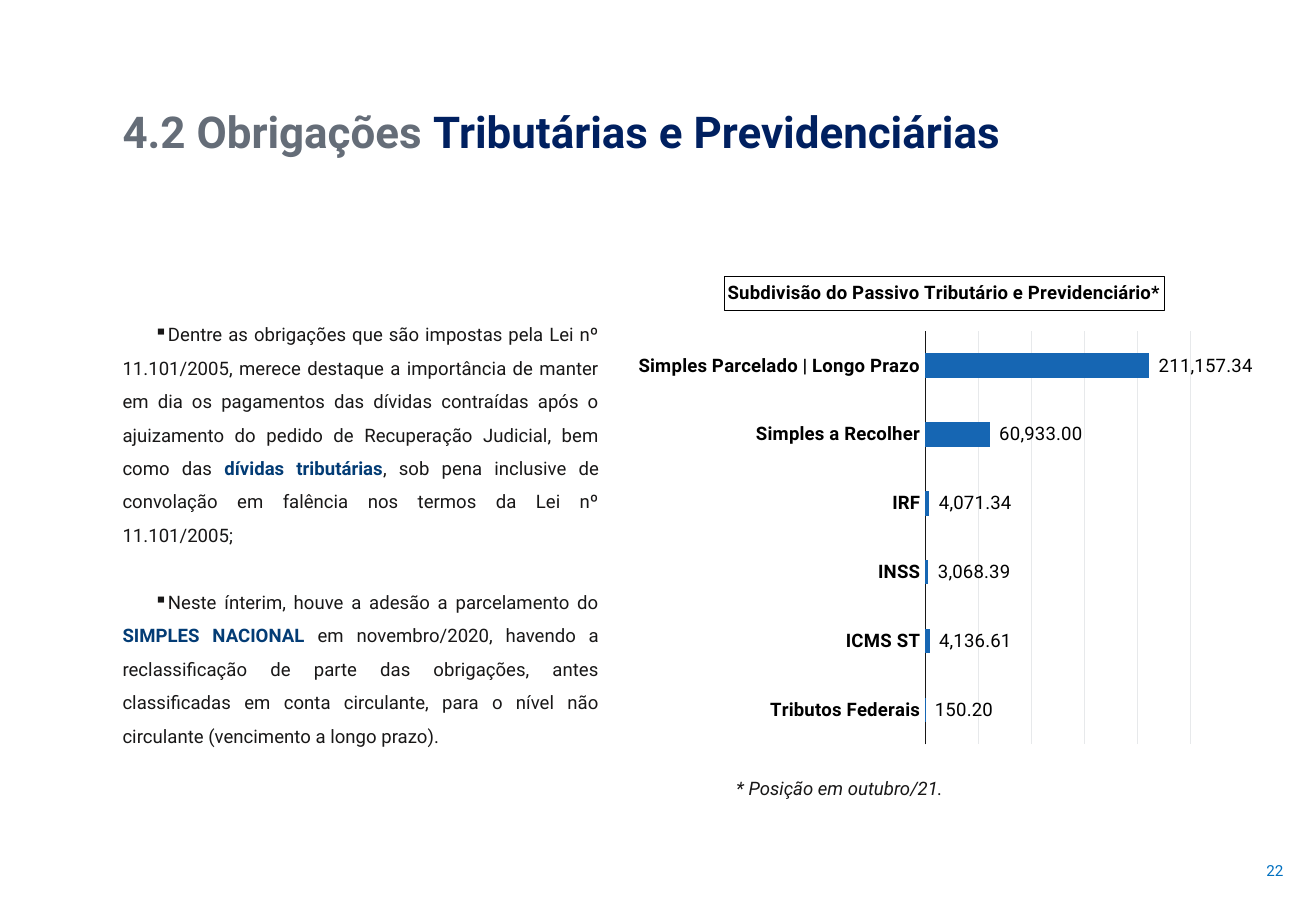
from lxml import etree
from pptx import Presentation
from pptx.chart.data import CategoryChartData
from pptx.dml.color import RGBColor
from pptx.enum.chart import XL_CHART_TYPE, XL_LABEL_POSITION, XL_TICK_MARK
from pptx.enum.text import MSO_ANCHOR, PP_ALIGN
from pptx.oxml import parse_xml
from pptx.oxml.ns import nsdecls, qn
from pptx.util import Pt

BARS = XL_CHART_TYPE.BAR_CLUSTERED
OUT_END = XL_LABEL_POSITION.OUTSIDE_END
NO_TICK = XL_TICK_MARK.NONE
TOP, MIDDLE = MSO_ANCHOR.TOP, MSO_ANCHOR.MIDDLE
LEFT, CENTER, RIGHT, JUSTIFY = (
    PP_ALIGN.LEFT, PP_ALIGN.CENTER, PP_ALIGN.RIGHT, PP_ALIGN.JUSTIFY)

BLACK = RGBColor(0x00, 0x00, 0x00)
INK = RGBColor(0x18, 0x17, 0x17)
GRAY = RGBColor(0x65, 0x6D, 0x78)
NAVY = RGBColor(0x00, 0x20, 0x60)
DEEP = RGBColor(0x03, 0x3C, 0x75)
BLUE = RGBColor(0x16, 0x66, 0xB3)
SKY = RGBColor(0x00, 0x70, 0xC0)
PALE = RGBColor(0xE7, 0xE9, 0xEB)

SCALE = 9144
MONEY = r'_(* #,##0.00_);_(* \(#,##0.00\);_(* "-"??_);_(@_)'

PLAIN = {"size": Pt(11), "bold": False, "color": INK}
STRONG = {"size": Pt(11), "bold": True, "color": DEEP}
NOTE = {"size": Pt(11), "italic": True, "color": INK}
PAGE = {"size": Pt(9), "color": SKY}
HEAD = {"size": Pt(26), "bold": True, "color": GRAY}
LABEL = {"size": Pt(11), "bold": False, "color": BLACK}
BOLD = {"size": Pt(11), "bold": True, "color": BLACK}

TITLE = [[("4.2 Obrigações ", HEAD),
          ("Tributárias e Previdenciárias", {**HEAD, "color": NAVY})]]
BODY = [
    [("Dentre as obrigações que são impostas pela Lei nº 11.101/2005, merece "
      "destaque a importância de manter em dia os pagamentos das dívidas "
      "contraídas após o ajuizamento do pedido de Recuperação Judicial, bem "
      "como das ", PLAIN),
     ("dívidas tributárias", STRONG),
     (", sob pena inclusive de convolação em falência nos termos da Lei nº "
      "11.101/2005;", PLAIN)],
    [("Neste ínterim, houve a adesão a parcelamento do ", PLAIN),
     ("SIMPLES NACIONAL ", STRONG),
     ("em novembro/2020, havendo a reclassificação de parte das obrigações, "
      "antes classificadas em conta circulante, para o nível não circulante "
      "(vencimento a longo prazo).", PLAIN)],
]
DEBTS = {
    "Tributos Federais": 150.2,
    "ICMS ST": 4136.61,
    "INSS": 3068.39,
    "IRF": 4071.34,
    "Simples a Recolher": 60933,
    "Simples Parcelado | Longo Prazo": 211157.34,
}


def px(*sizes):
    """Turn px lengths into EMU."""
    return [size * SCALE for size in sizes]


def style(font, look):
    """Apply a dict of format values to a font."""
    font.name = "Roboto"
    for key, value in look.items():
        if key == "color":
            font.color.rgb = value
        else:
            setattr(font, key, value)


def add_text(slide, box, paras, align=LEFT, anchor=TOP):
    """Place styled paragraphs in a box and return them."""
    frame = slide.shapes.add_textbox(*px(*box)).text_frame
    frame.word_wrap = True
    frame.vertical_anchor = anchor
    for i, runs in enumerate(paras):
        para = frame.add_paragraph() if i else frame.paragraphs[0]
        para.alignment = align
        for text, look in runs:
            run = para.add_run()
            run.text = text
            style(run.font, look)
    return frame.paragraphs


def add_body(slide, box):
    """Place the bulleted, justified text."""
    for i, para in enumerate(add_text(slide, box, BODY, JUSTIFY)):
        props = para._p.get_or_add_pPr()
        props.set("marL", "0")
        props.set("indent", str(26 * SCALE))
        etree.SubElement(props, qn("a:buChar")).set("char", "▪")
        para.line_spacing = 1.5
        if i:
            para.space_before = Pt(20)


def set_plot(chart, spot):
    """Fix the inner plot area as fractions of the chart."""
    parts = "".join(f'<c:{tag} val="{val}"/>' for tag, val in spot.items())
    area = chart._chartSpace.chart.plotArea
    for old in area.findall(qn("c:layout")):
        area.remove(old)
    area.insert(0, parse_xml(
        f'<c:layout {nsdecls("c")}><c:manualLayout>{parts}'
        '</c:manualLayout></c:layout>'))


def add_bars(slide, box):
    """Place the bar chart with its framed title."""
    data = CategoryChartData()
    data.categories = list(DEBTS)
    data.add_series("Series 1", list(DEBTS.values()))
    chart = slide.shapes.add_chart(BARS, *px(*box), data).chart
    style(chart.font, LABEL)
    chart.has_legend = False

    title = chart.chart_title
    run = title.text_frame.paragraphs[0].add_run()
    run.text = "Subdivisão do Passivo Tributário e Previdenciário*"
    style(run.font, BOLD)
    title.include_in_layout = False

    cats, vals = chart.category_axis, chart.value_axis
    cats.major_tick_mark = NO_TICK
    style(cats.tick_labels.font, BOLD)
    vals.visible = False
    vals.minimum_scale, vals.maximum_scale = 0, 250000
    vals.major_unit = 50000
    vals.has_major_gridlines = True
    lines = {BLACK: title.format.line, INK: cats.format.line,
             PALE: vals.major_gridlines.format.line}
    for color, line in lines.items():
        line.color.rgb = color
        line.width = Pt(0.75)

    plot = chart.plots[0]
    plot.gap_width = 182
    plot.vary_by_categories = False
    fill = plot.series[0].format.fill
    fill.solid()
    fill.fore_color.rgb = BLUE
    plot.has_data_labels = True
    tags = plot.data_labels
    style(tags.font, LABEL)
    looks = {"show_value": True, "position": OUT_END,
             "number_format": MONEY, "number_format_is_linked": False}
    for key, value in looks.items():
        setattr(tags, key, value)
    set_plot(chart, {"layoutTarget": "inner", "xMode": "edge",
                     "yMode": "edge", "x": 0.47, "y": 0.14,
                     "w": 0.42, "h": 0.81})


def add_panel(slide, box):
    """Place the chart and the note below it."""
    left, top, width, height = box
    add_bars(slide, (left, top, width, height - 30))
    add_text(slide, (left + 25, top + height - 30, 298, 30),
             [[("* Posição em outubro/21.", NOTE)]], CENTER, MIDDLE)


def main():
    """Build and save the slide."""
    deck = Presentation()
    deck.slide_width, deck.slide_height = px(1083, 750)
    slide = deck.slides.add_slide(deck.slide_layouts[6])
    add_text(slide, (91, 81, 971, 54), TITLE)
    add_body(slide, (91, 252, 412, 343))
    add_panel(slide, (517, 214, 520, 450))
    add_text(slide, (987, 692, 79, 50), [[("22", PAGE)]], RIGHT, MIDDLE)
    deck.save("out.pptx")


if __name__ == "__main__":
    main()
